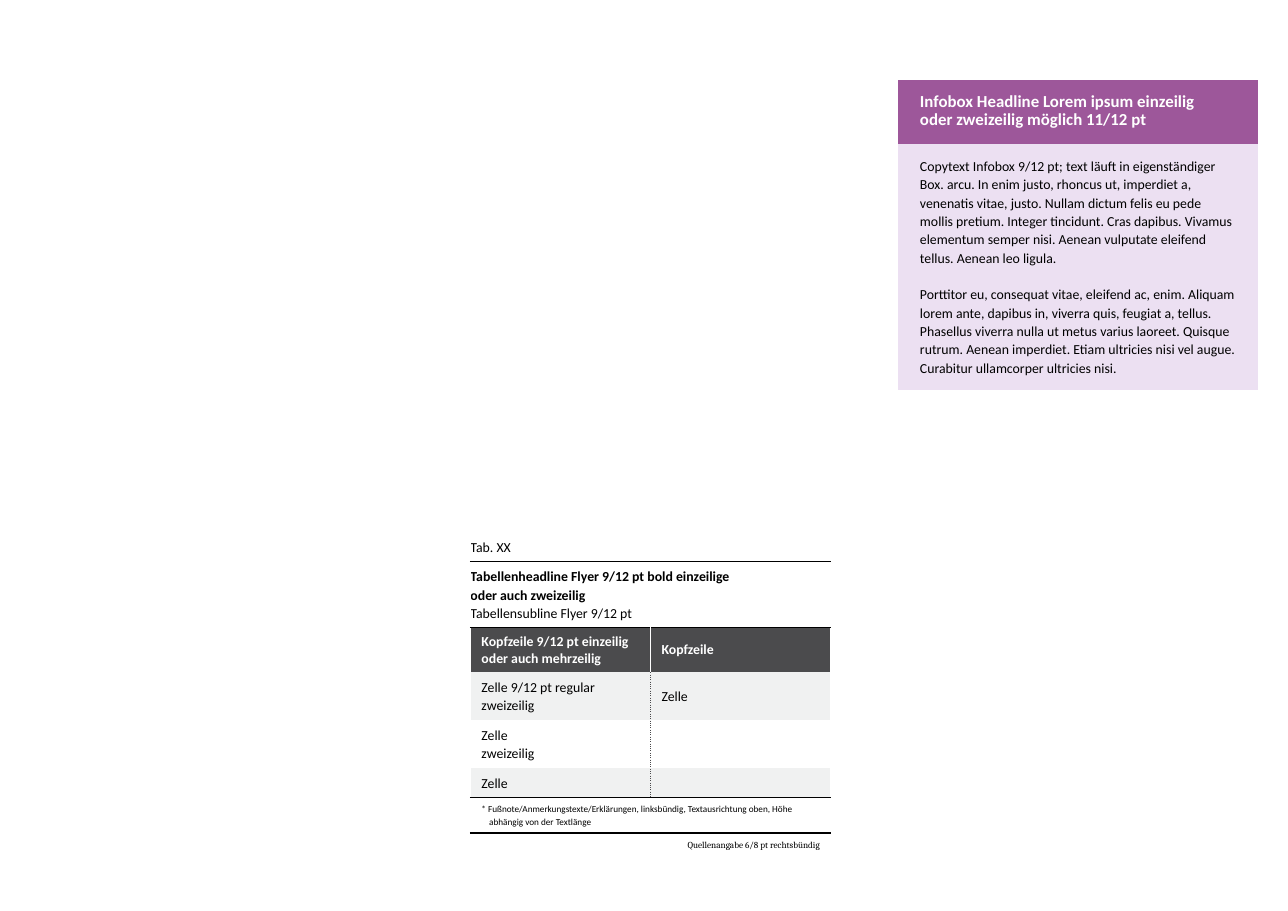
import pptx
import pptx.util
import pptx.dml.color
import pptx.enum.text
import lxml.etree
import pptx.oxml.ns

Inches, Pt = pptx.util.Inches, pptx.util.Pt
RGB = pptx.dml.color.RGBColor.from_string
ANCHOR = pptx.enum.text.MSO_ANCHOR
qn = pptx.oxml.ns.qn
COLORS = {"black": "000000", "white": "FFFFFF", "dark": "4B4B4D",
          "gray": "F0F1F1", "purple": "9D579A", "lilac": "ECE0F2"}
NO_STYLE = "{2D5ABB26-0587-4C30-8999-92F81FD0307C}"


def write(cell, text, size=9, bold=False, color="black", font="Calibri",
          spacing=12, before=0, align=None):
    tf = cell.text_frame
    p = tf.add_paragraph() if cell.text else tf.paragraphs[0]
    p.alignment = align
    p.space_before = Pt(before)
    if spacing:
        p.line_spacing = Pt(spacing)
    if not text:
        lxml.etree.SubElement(p._p, qn("a:endParaRPr"), sz=str(size * 100))
        return p
    r = p.add_run()
    r.text = text
    r.font.name = font
    r.font.size = Pt(size)
    r.font.bold = bold
    r.font.color.rgb = RGB(COLORS[color])
    return p


def border(cell, side, color, width, dash="solid"):
    ln = lxml.etree.SubElement(cell._tc.get_or_add_tcPr(), qn("a:ln" + side), w=str(Pt(width)))
    fill = lxml.etree.SubElement(ln, qn("a:solidFill"))
    lxml.etree.SubElement(fill, qn("a:srgbClr"), val=COLORS[color])
    lxml.etree.SubElement(ln, qn("a:prstDash"), val=dash)


prs = pptx.Presentation()
prs.slide_width = Inches(11.69)
prs.slide_height = Inches(8.27)
s = prs.slides.add_slide(prs.slide_layouts[6])

heights = [0.27, 0.6, 0.4, 0.43, 0.43, 0.27, 0.32, 0.21]
data = s.shapes.add_table(8, 2, Inches(4.27), Inches(4.83), Inches(3.27), Inches(sum(heights))).table
box_heights = [0.57, 2.24]
infobox = s.shapes.add_table(2, 1, Inches(8.15), Inches(0.73), Inches(3.27), Inches(sum(box_heights))).table

for tbl, row_heights in ((data, heights), (infobox, box_heights)):
    tbl.first_row = False
    tbl.horz_banding = False
    tbl._tbl.tblPr.find(qn("a:tableStyleId")).text = NO_STYLE
    for row, height in zip(tbl.rows, row_heights):
        row.height = Inches(height)

rules = {0: 1, 5: 0.5, 6: 1}
fills = {2: "dark", 3: "gray", 4: "white", 5: "gray"}
for i in range(8):
    divider = ("white", 0.75) if i == 2 else ("dark", 0.5, "sysDot")
    edge = ("white", 1)
    for j in range(2):
        cell = data.cell(i, j)
        border(cell, "L", *(divider if j == 1 and i in fills else edge))
        border(cell, "R", *(divider if j == 0 and i in fills else edge))
        if i - 1 in rules:
            border(cell, "T", "black", rules[i - 1])
        if i in rules:
            border(cell, "B", "black", rules[i])
        if i in fills:
            cell.fill.solid()
            cell.fill.fore_color.rgb = RGB(COLORS[fills[i]])
            cell.vertical_anchor = ANCHOR.MIDDLE
    if i not in fills:
        data.cell(i, 0).merge(data.cell(i, 1))
    if i < 2:
        data.cell(i, 0).margin_left = data.cell(i, 0).margin_right = 0

write(data.cell(0, 0), "Tab. XX")
write(data.cell(1, 0), "Tabellenheadline Flyer 9/12 pt bold einzeilige", bold=True)
write(data.cell(1, 0), "oder auch zweizeilig", bold=True)
write(data.cell(1, 0), "Tabellensubline Flyer 9/12 pt")

header = [["Kopfzeile 9/12 pt einzeilig", "oder auch mehrzeilig"], ["Kopfzeile"]]
for j, lines in enumerate(header):
    for text in lines:
        write(data.cell(2, j), text, bold=True, color="white", spacing=None)

body = [[["Zelle 9/12 pt regular", "zweizeilig"], ["Zelle"]],
        [["Zelle", "zweizeilig"], [""]],
        [["Zelle"], [""]]]
for i, row in enumerate(body, 3):
    for j, lines in enumerate(row):
        for text in lines:
            write(data.cell(i, j), text)

p = write(data.cell(6, 0), "* Fußnote/Anmerkungstexte/Erklärungen, linksbündig, Textausrichtung oben, "
          "Höhe abhängig von der Textlänge", size=6, spacing=8)
pPr = p._p.get_or_add_pPr()
pPr.set("marL", str(Inches(0.07)))
pPr.set("indent", str(Inches(-0.07)))
write(data.cell(7, 0), "Quellenangabe 6/8 pt rechtsbündig", size=6, spacing=8,
      font="Cambria", align=pptx.enum.text.PP_ALIGN.RIGHT)

for i, color in enumerate(["purple", "lilac"]):
    cell = infobox.cell(i, 0)
    cell.fill.solid()
    cell.fill.fore_color.rgb = RGB(COLORS[color])
    cell.margin_left = cell.margin_right = Inches(0.2)
    cell.margin_top = cell.margin_bottom = Inches(0.12)
headline, copytext = infobox.cell(0, 0), infobox.cell(1, 0)
headline.vertical_anchor = ANCHOR.MIDDLE
for text in ["Infobox Headline Lorem ipsum einzeilig", "oder zweizeilig möglich 11/12 pt"]:
    write(headline, text, size=11, bold=True, color="white")
write(copytext, "Copytext Infobox 9/12 pt; text läuft in eigenständiger Box. arcu. In enim justo, "
      "rhoncus ut, imperdiet a, venenatis vitae, justo. Nullam dictum felis eu pede mollis pretium. "
      "Integer tincidunt. Cras dapibus. Vivamus elementum semper nisi. Aenean vulputate eleifend "
      "tellus. Aenean leo ligula.")
write(copytext, "Porttitor eu, consequat vitae, eleifend ac, enim. Aliquam lorem ante, dapibus in, "
      "viverra quis, feugiat a, tellus. Phasellus viverra nulla ut metus varius laoreet. Quisque "
      "rutrum. Aenean imperdiet. Etiam ultricies nisi vel augue. Curabitur ullamcorper ultricies nisi.",
      before=12)

prs.save("out.pptx")
